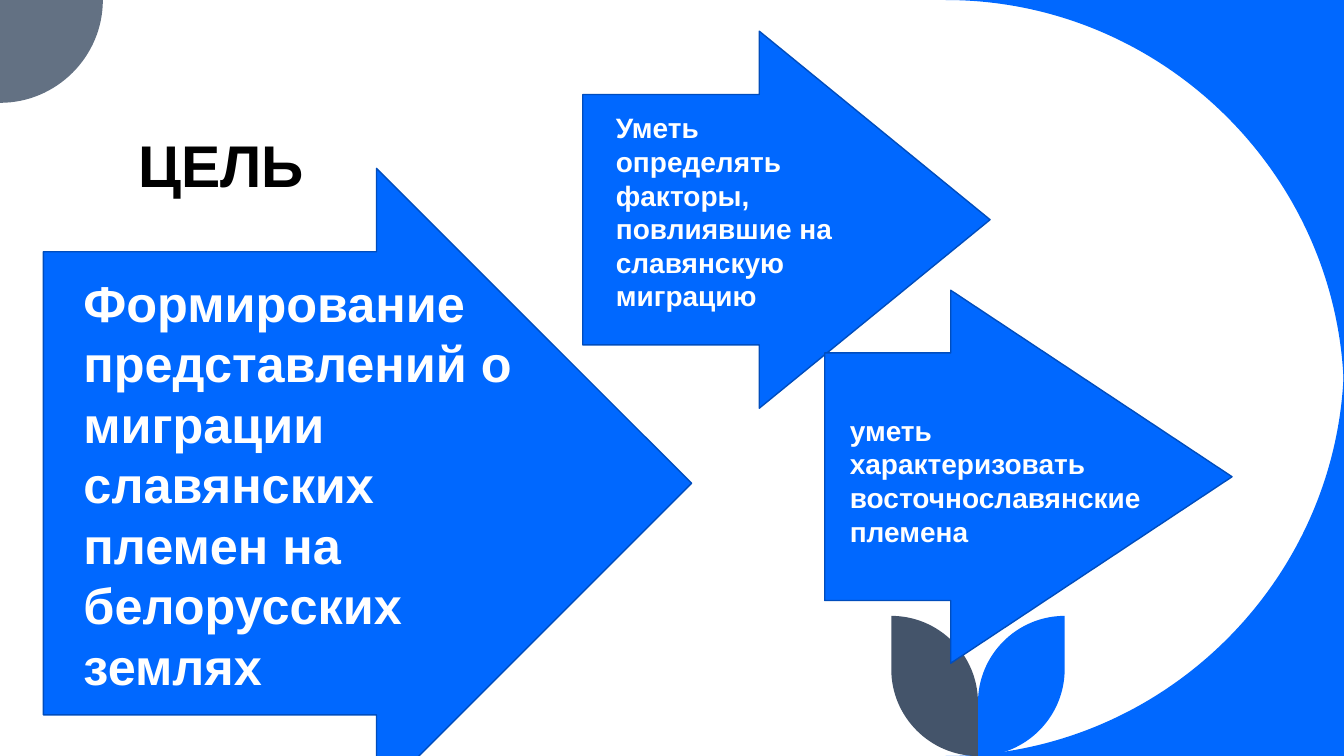
from lxml.etree import SubElement
from pptx import Presentation
from pptx.dml.color import RGBColor
from pptx.enum.shapes import MSO_SHAPE
from pptx.enum.text import MSO_ANCHOR, MSO_AUTO_SIZE, PP_ALIGN
from pptx.oxml.ns import qn
from pptx.util import Inches, Pt

WIDTH, HEIGHT = 13.33, 7.5
BLUE, EDGE, GREY, SLATE = "0068FF", "004DBD", "637183", "44546A"
WHITE, BLACK = "FFFFFF", "000000"


def color(code):
    """Turn a hex string into a colour."""
    return RGBColor.from_string(code)


def place(shape, box):
    """Set left, top, width and height in inches."""
    shape.left, shape.top, shape.width, shape.height = map(Inches, box)


def bend(start, corner, end):
    """Return the three curve points of a quarter circle rounding a corner."""
    near, far = [
        tuple(a + (c - a) * 0.55 for a, c in zip(point, corner))
        for point in (start, end)
    ]
    return [near, far, end]


def curve(lines):
    """Merge three line steps into one curve step."""
    first = lines[0]
    step = SubElement(first.getparent(), qn("a:cubicBezTo"))
    first.addprevious(step)
    for line in lines:
        step.append(line[0])
        line.getparent().remove(line)


def add_outline(slide, start, steps, fill):
    """Draw a closed outline of lines (one point) and curves (three points)."""
    builder = slide.shapes.build_freeform(*map(Inches, start))
    points = [(Inches(x), Inches(y)) for step in steps for x, y in step]
    builder.add_line_segments(points, close=True)
    shape = builder.convert_to_shape()
    lines = list(shape.element.iter(qn("a:lnTo")))
    for step in steps:
        part, lines = lines[:len(step)], lines[len(step):]
        if len(step) == 3:
            curve(part)
    shape.shadow.inherit = False
    shape.fill.solid()
    shape.fill.fore_color.rgb = color(fill)
    shape.line.fill.background()


def add_corner(slide, start, tip, end, fill):
    """Draw a corner piece with one round side."""
    add_outline(slide, tip, [[start], bend(start, tip, end)], fill)


def add_leaf(slide, side, fill):
    """Draw a leaf on one side of the stem."""
    stem, size, top = 9.7, 0.86, 6.11
    edge = stem + side * size
    tip, foot = (edge, top), (stem, HEIGHT)
    low, high = (edge, HEIGHT - size), (stem, top + size)
    steps = [
        [low],
        bend(low, (edge, HEIGHT), foot),
        [high],
        bend(high, (stem, top), tip),
    ]
    add_outline(slide, tip, steps, fill)


def add_decor(slide):
    """Draw the corners and the two leaves."""
    big, small = 3.95, 1.02
    left = WIDTH - big
    add_corner(slide, (left, 0), (WIDTH, 0), (WIDTH, big), BLUE)
    add_corner(slide, (WIDTH, HEIGHT - big), (WIDTH, HEIGHT), (left, HEIGHT), BLUE)
    round_side = bend((small, 0), (small, small), (0, small))
    add_outline(slide, (0, 0), [[(small, 0)], round_side], GREY)
    add_leaf(slide, 1, BLUE)
    add_leaf(slide, -1, SLATE)


def style(frame, text, size, fill):
    """Write one bold paragraph and return it."""
    frame.text = text
    frame.word_wrap = True
    para = frame.paragraphs[0]
    para.alignment = PP_ALIGN.LEFT
    font = para.runs[0].font
    font.name, font.size, font.bold = "Arial", Pt(size), True
    font.color.rgb = color(fill)
    return para


def add_title(slide, text):
    """Fill and format the title placeholder."""
    title = slide.shapes.title
    place(title, (1.27, 0.11, 10.69, 1.91))
    frame = title.text_frame
    style(frame, text, 42, BLACK).line_spacing = 0.8
    frame.auto_size = MSO_AUTO_SIZE.NONE
    frame.vertical_anchor = MSO_ANCHOR.BOTTOM


def add_arrow(slide, box, shaft, head):
    """Draw a blue block arrow."""
    arrow = slide.shapes.add_shape(MSO_SHAPE.RIGHT_ARROW, *map(Inches, box))
    arrow.shadow.inherit = False
    arrow.adjustments[0], arrow.adjustments[1] = shaft, head
    arrow.fill.solid()
    arrow.fill.fore_color.rgb = color(BLUE)
    arrow.line.color.rgb = color(EDGE)
    arrow.line.width = Pt(1)


def add_label(slide, box, text, size):
    """Add a white text box."""
    label = slide.shapes.add_textbox(*map(Inches, box))
    style(label.text_frame, text, size, WHITE)
    label.text_frame.auto_size = MSO_AUTO_SIZE.SHAPE_TO_FIT_TEXT


def main():
    """Build the slide and save it."""
    deck = Presentation()
    deck.slide_width, deck.slide_height = Inches(WIDTH), Inches(HEIGHT)
    slide = deck.slides.add_slide(deck.slide_layouts[5])
    add_decor(slide)
    add_title(slide, "ЦЕЛЬ")
    add_arrow(slide, (0.43, 1.67, 6.43, 6.25), 0.735, 0.5)
    goal = "Формирование представлений о миграции славянских племен на белорусских землях"
    add_label(slide, (0.73, 2.65, 4.66, 4.3), goal, 36)
    add_arrow(slide, (5.78, 0.31, 4.04, 3.74), 0.664, 0.612)
    add_arrow(slide, (8.18, 2.88, 4.04, 3.7), 0.664, 0.754)
    cause = "Уметь определять факторы, повлиявшие на славянскую миграцию"
    add_label(slide, (6.01, 1.05, 2.62, 2.1), cause, 20)
    tribes = "уметь характеризовать восточнославянские племена"
    add_label(slide, (8.33, 4.05, 3.31, 1.43), tribes, 20)
    deck.save("out.pptx")


if __name__ == "__main__":
    main()
